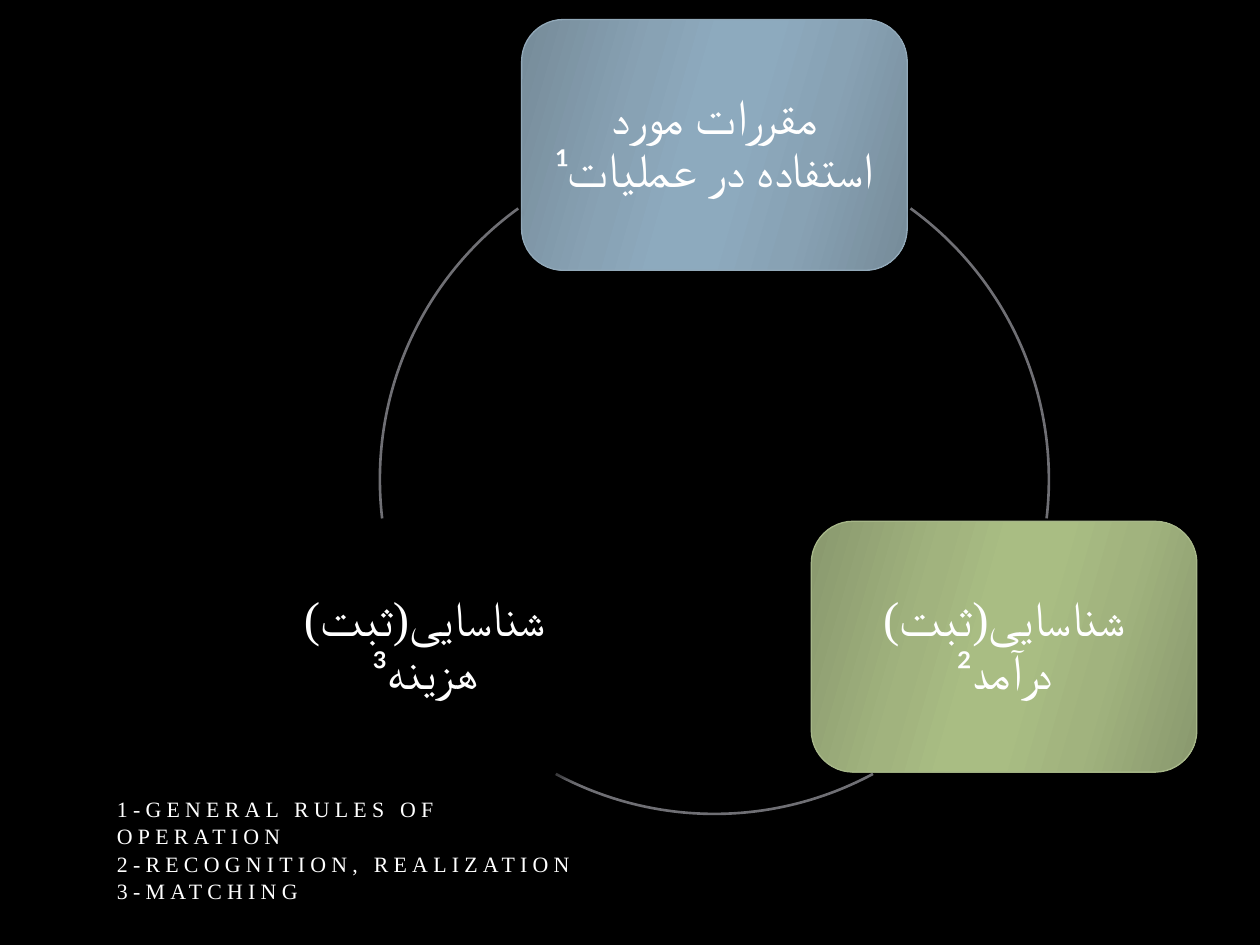
from dataclasses import dataclass
from math import cos, radians, sin

from lxml import etree
from pptx import Presentation
from pptx import util as u
from pptx.dml.color import RGBColor
from pptx.enum import shapes, text
from pptx.oxml import ns


@dataclass(frozen=True)
class Theme:
    back: str = "000000"
    ink: str = "FFFFFF"
    ring: str = "6F6F74"
    blue: tuple = ("768B99", "88A2B4", "8DAABE")
    green: tuple = ("89986E", "A1B37E", "A9BD83")
    blue_edge: str = "92A9B9"
    green_edge: str = "A7B789"
    body: str = "Times New Roman"
    mark: str = "Calibri"
    card_size: float = 28
    note_size: float = 12.5
    edge_width: float = 0.75
    ring_width: float = 1.5


def child(parent, tag, **attrs):
    return etree.SubElement(parent, ns.qn(tag), {k: str(v) for k, v in attrs.items()})


class CycleSlide:
    COLS, ROWS = 20, 15

    def __init__(self, prs, theme):
        self.theme = theme
        self.col = prs.slide_width / self.COLS
        self.row = prs.slide_height / self.ROWS
        self.s = prs.slides.add_slide(prs.slide_layouts[6])
        fill = self.s.background.fill
        fill.solid()
        fill.fore_color.rgb = RGBColor.from_string(theme.back)

    def box(self, left, top, width, height):
        return (round(left * self.col), round(top * self.row),
                round(width * self.col), round(height * self.row))

    def centred(self, x, y, width, height):
        return self.box(x - width / 2, y - height / 2, width, height)

    def outline(self, sp, color, width):
        sp.line.color.rgb = RGBColor.from_string(color)
        sp.line.width = u.Pt(width)

    def shadow(self, sp, alpha, blur, dist):
        sp.shadow.inherit = False
        effects = sp._element.spPr.find(ns.qn("a:effectLst"))
        shade = child(effects, "a:outerShdw", blurRad=u.Pt(blur), dist=u.Pt(dist),
                      dir=90 * 60000, rotWithShape=0)
        child(child(shade, "a:srgbClr", val=self.theme.back), "a:alpha", val=alpha * 1000)

    def gradient(self, sp, tones):
        dark, middle, light = tones
        sp.fill.gradient()
        grad = sp._element.spPr.find(ns.qn("a:gradFill"))
        for part in list(grad):
            grad.remove(part)
        stops = child(grad, "a:gsLst")
        for pos, tone in ((0, dark), (30, middle), (45, light),
                          (55, light), (73, middle), (100, dark)):
            child(child(stops, "a:gs", pos=pos * 1000), "a:srgbClr", val=tone)
        child(grad, "a:lin", ang=16 * 60000, scaled=0)

    def run(self, p, words, size, font, spacing=0):
        r = p.add_run()
        r.text = words
        r.font.size = u.Pt(size)
        r.font.name = font
        r.font.color.rgb = RGBColor.from_string(self.theme.ink)
        props = r._r.get_or_add_rPr()
        child(props, "a:cs", typeface=font)
        if spacing:
            props.set("spc", str(spacing * 100))

    def arc(self, x, y, radius, start, end):
        sp = self.s.shapes.add_shape(shapes.MSO_SHAPE.ARC,
                                     *self.centred(x, y, 2 * radius, 2 * radius))
        sp.adjustments[0], sp.adjustments[1] = start * 0.6, end * 0.6
        sp.fill.background()
        self.outline(sp, self.theme.ring, self.theme.ring_width)
        self.shadow(sp, 40, 3, 2)

    def card(self, x, y, width, height, words, mark, tones=None, edge=None):
        sp = self.s.shapes.add_shape(shapes.MSO_SHAPE.ROUNDED_RECTANGLE,
                                     *self.centred(x, y, width, height))
        if tones:
            self.gradient(sp, tones)
            self.outline(sp, edge, self.theme.edge_width)
            self.shadow(sp, 40, 4, 3.3)
        else:
            sp.fill.solid()
            sp.fill.fore_color.rgb = RGBColor.from_string(self.theme.back)
            sp.line.fill.background()
            self.shadow(sp, 57, 4.5, 3)
        tf = sp.text_frame
        tf.word_wrap = True
        tf.vertical_anchor = text.MSO_ANCHOR.MIDDLE
        tf.margin_left = tf.margin_right = tf.margin_top = tf.margin_bottom = u.Inches(0.12)
        p = tf.paragraphs[0]
        p.alignment = text.PP_ALIGN.CENTER
        p.line_spacing = 0.9
        p._p.get_or_add_pPr().set("rtl", "1")
        self.run(p, words, self.theme.card_size, self.theme.body)
        self.run(p, mark, self.theme.card_size, self.theme.mark)

    def notes(self, left, top, width, height, lines):
        tf = self.s.shapes.add_textbox(*self.box(left, top, width, height)).text_frame
        tf.word_wrap = True
        tf.vertical_anchor = text.MSO_ANCHOR.MIDDLE
        for i, line in enumerate(lines):
            p = tf.add_paragraph() if i else tf.paragraphs[0]
            p.line_spacing = 1.05
            self.run(p, line, self.theme.note_size, self.theme.body, spacing=3)


def main():
    prs = Presentation()
    prs.slide_width, prs.slide_height = u.Inches(10), u.Inches(7.5)
    theme = Theme()
    slide = CycleSlide(prs, theme)
    x, y, radius = 11.34, 7.61, 5.31
    steps = (
        ("مقررات مورد استفاده در عملیات", "¹", theme.blue, theme.blue_edge, (305.9, 6.7)),
        ("شناسایی(ثبت) درآمد", "²", theme.green, theme.green_edge, (61.7, 118.3)),
        ("شناسایی(ثبت) هزینه", "³", None, None, (173.3, 234.1)),
    )
    for i, (words, mark, tones, edge, sweep) in enumerate(steps):
        angle = radians(360 / len(steps) * i - 90)
        slide.card(x + radius * cos(angle), y + radius * sin(angle), 6.12, 3.98,
                   words, mark, tones, edge)
        slide.arc(x, y, radius, *sweep)
    slide.notes(1.66, 12.54, 7.96, 1.88, (
        "1-GENERAL RULES OF OPERATION",
        "2-RECOGNITION, REALIZATION",
        "3-MATCHING",
    ))
    prs.save("out.pptx")


if __name__ == "__main__":
    main()
